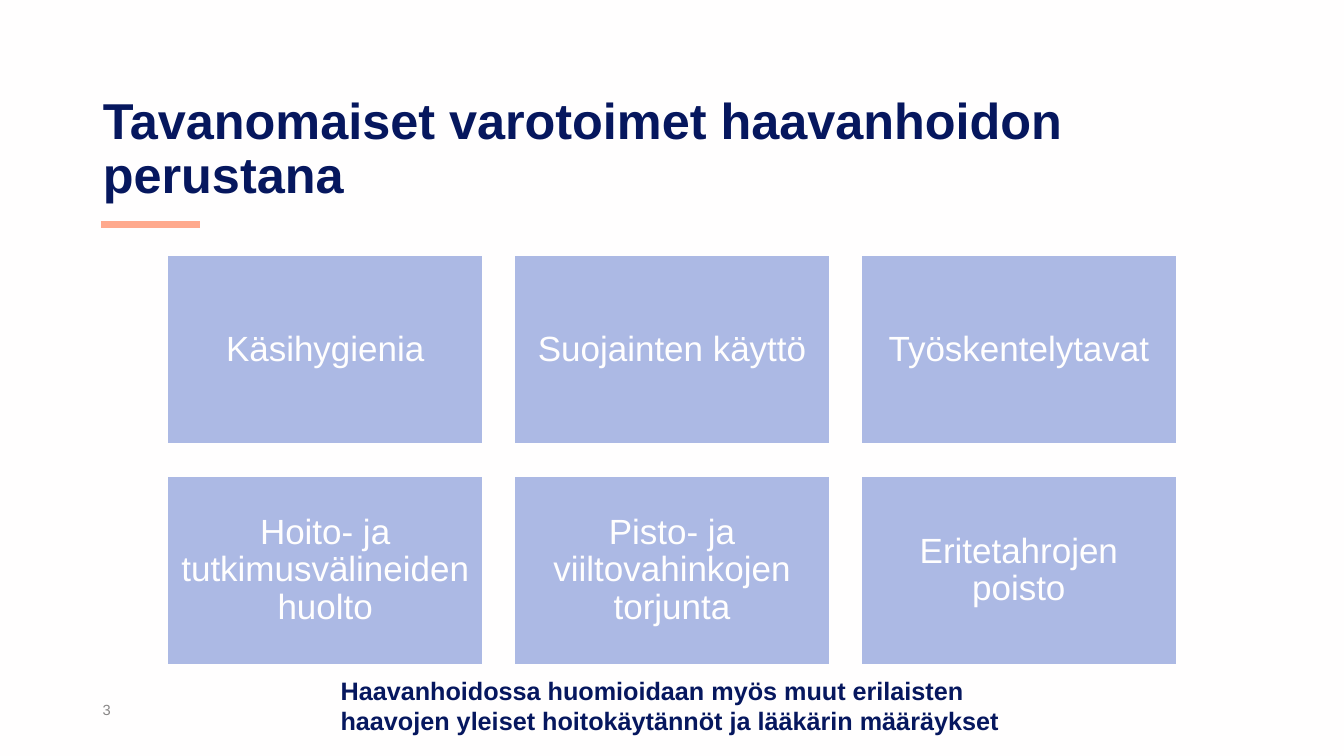
from dataclasses import dataclass

from lxml.etree import SubElement
from pptx import Presentation
from pptx.dml.color import RGBColor
from pptx.enum.shapes import MSO_CONNECTOR as Connector, MSO_SHAPE as Shape
from pptx.enum.text import MSO_ANCHOR as Anchor, PP_ALIGN as Align
from pptx.oxml.ns import qn
from pptx.util import Inches, Pt


@dataclass(frozen=True)
class Theme:
    font: str = "Arial"
    background: RGBColor = RGBColor(0xFF, 0xFE, 0xFE)
    navy: RGBColor = RGBColor(0x06, 0x17, 0x5E)
    coral: RGBColor = RGBColor(0xFF, 0xA9, 0x8D)
    tile: RGBColor = RGBColor(0xAC, 0xB9, 0xE4)
    gray: RGBColor = RGBColor(0x88, 0x86, 0x86)
    title_size: float = 36
    tile_size: float = 25
    note_size: float = 18
    number_size: float = 10.5


@dataclass(frozen=True)
class Grid:
    left: float = 1.66
    top: float = 2.53
    width: float = 3.13
    height: float = 1.88
    gap: float = 0.31
    columns: int = 3

    def cell(self, index):
        row, column = divmod(index, self.columns)
        return (self.left + column * (self.width + self.gap),
                self.top + row * (self.height + self.gap),
                self.width, self.height)


THEME = Theme()
GRID = Grid()
PRECAUTIONS = (
    "Käsihygienia",
    "Suojainten käyttö",
    "Työskentelytavat",
    "Hoito- ja tutkimusvälineiden huolto",
    "Pisto- ja viiltovahinkojen torjunta",
    "Eritetahrojen poisto",
)


def apply(target, values):
    for name, value in values.items():
        setattr(target, name, value)


def place(shape, area):
    names = ("left", "top", "width", "height")
    apply(shape, dict(zip(names, map(Inches, area))))


def write(shape, text, size, color, bold=False, frame=None, layout=None):
    apply(shape.text_frame, {"word_wrap": True, **(frame or {})})
    para = shape.text_frame.paragraphs[0]
    apply(para, layout or {})
    span = para.add_run()
    span.text = text
    apply(span.font, {"name": THEME.font, "size": Pt(size), "bold": bold})
    span.font.color.rgb = color


def add_title(page, text):
    title = page.shapes.title
    place(title, (0.92, 0.5, 10, 1.58))
    write(title, text, THEME.title_size, THEME.navy, True,
          {"vertical_anchor": Anchor.BOTTOM},
          {"alignment": Align.LEFT, "line_spacing": 0.9})


def add_accent(page):
    ends = map(Inches, (1, 2.23, 1.98, 2.23))
    accent = page.shapes.add_connector(Connector.STRAIGHT, *ends)
    accent.line.color.rgb = THEME.coral
    accent.line.width = Pt(5)
    SubElement(accent._element.spPr, qn("a:effectLst"))


def add_tile(page, area, text):
    tile = page.shapes.add_shape(Shape.RECTANGLE, *map(Inches, area))
    tile.shadow.inherit = False
    tile.fill.solid()
    tile.fill.fore_color.rgb = THEME.tile
    tile.line.color.rgb = THEME.background
    tile.line.width = Pt(1.5)
    sides = ("left", "top", "right", "bottom")
    frame = {f"margin_{side}": Inches(0.1) for side in sides}
    write(tile, text, THEME.tile_size, THEME.background,
          frame={**frame, "vertical_anchor": Anchor.MIDDLE},
          layout={"alignment": Align.CENTER, "line_spacing": 0.9})


def add_text(page, area, text, size, color, bold=False, anchor=Anchor.TOP):
    box = page.shapes.add_textbox(*map(Inches, area))
    write(box, text, size, color, bold, {"vertical_anchor": anchor})


def main():
    deck = Presentation()
    apply(deck, {"slide_width": Inches(13.33), "slide_height": Inches(7.5)})
    page = deck.slides.add_slide(deck.slide_layouts.get_by_name("Title Only"))
    page.background.fill.solid()
    page.background.fill.fore_color.rgb = THEME.background

    add_title(page, "Tavanomaiset varotoimet haavanhoidon perustana")
    add_accent(page)
    add_text(page, (0.92, 6.89, 3, 0.29), "3", THEME.number_size, THEME.gray,
             anchor=Anchor.MIDDLE)
    for index, precaution in enumerate(PRECAUTIONS):
        add_tile(page, GRID.cell(index), precaution)
    add_text(page, (3.28, 6.65, 6.77, 0.71),
             "Haavanhoidossa huomioidaan myös muut erilaisten haavojen "
             "yleiset hoitokäytännöt ja lääkärin määräykset",
             THEME.note_size, THEME.navy, True)
    deck.save("out.pptx")


if __name__ == "__main__":
    main()
